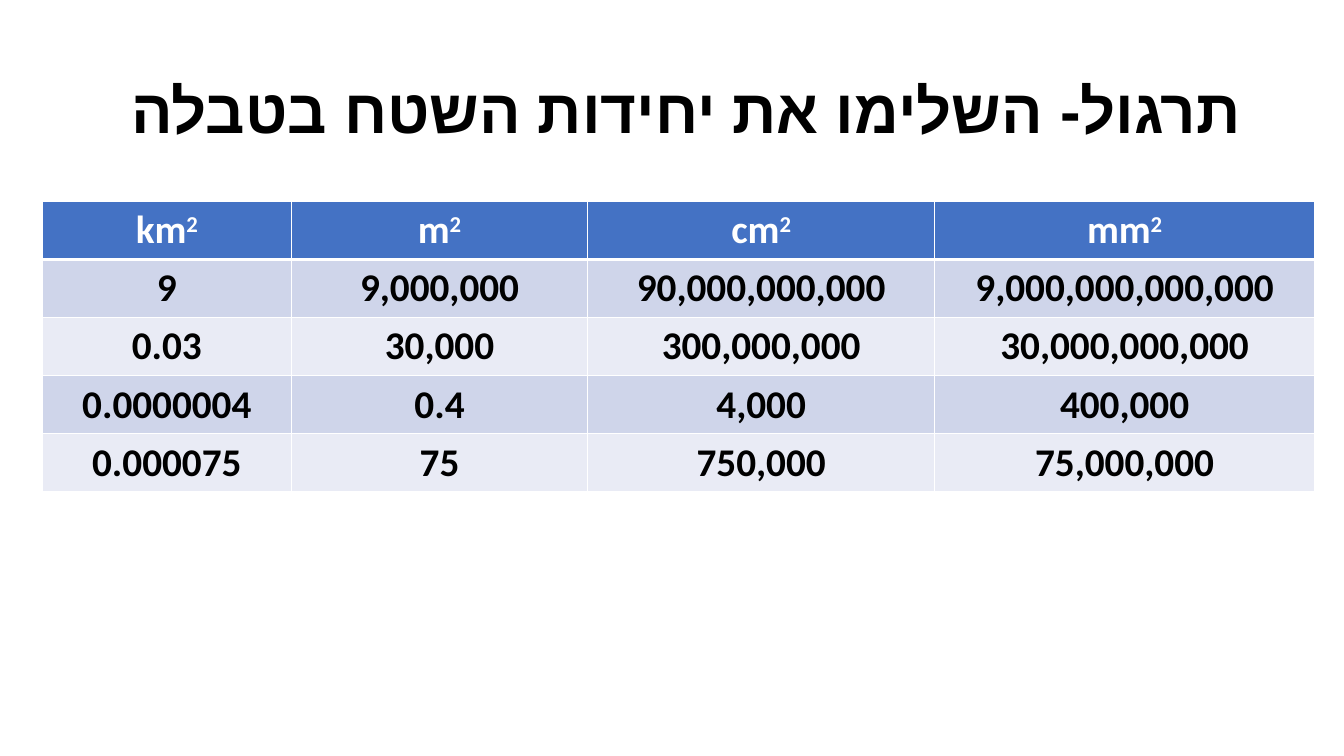
from lxml import etree
from pptx import Presentation
from pptx.dml.color import RGBColor
from pptx.enum.text import MSO_ANCHOR, MSO_AUTO_SIZE, PP_ALIGN
from pptx.oxml.ns import qn
from pptx.util import Pt

PX = 9144
TITLE_ONLY = 5
CENTER, RIGHT = PP_ALIGN.CENTER, PP_ALIGN.RIGHT
MIDDLE, NO_FIT = MSO_ANCHOR.MIDDLE, MSO_AUTO_SIZE.NONE
WHITE, BLACK, HEADER_BLUE = "FFFFFF", "000000", "4472C4"
BANDS = ("CFD5EA", "E9EBF5")
TITLE_FONT = {"name": "Arial", "size": Pt(44), "bold": True}
TABLE_FONT = {"name": "Calibri", "size": Pt(28), "bold": True}

UNITS = ("km", "m", "cm", "mm")
AREAS = (
    ("9", "9,000,000", "90,000,000,000", "9,000,000,000,000"),
    ("0.03", "30,000", "300,000,000", "30,000,000,000"),
    ("0.0000004", "0.4", "4,000", "400,000"),
    ("0.000075", "75", "750,000", "75,000,000"),
)
COLUMN_WIDTHS = (247, 294, 344, 377)
ROW_HEIGHT = 57


def px(length):
    return length * PX


def colour(value):
    return RGBColor.from_string(value)


def set_all(target, values):
    for name, value in values.items():
        setattr(target, name, value)


def add_span(para, text, font, ink, superscript=False):
    span = para.add_run()
    span.text = text
    set_all(span.font, font)
    span.font.color.rgb = colour(ink)
    if superscript:
        span.font._element.set("baseline", "30000")
    return span


def draw_title(page, text, box):
    title = page.shapes.title
    set_all(title, dict(zip(("left", "top", "width", "height"), map(px, box))))
    frame = title.text_frame
    set_all(frame, {"word_wrap": True, "auto_size": NO_FIT, "vertical_anchor": MIDDLE})
    para = frame.paragraphs[0]
    set_all(para, {"alignment": RIGHT, "line_spacing": 0.9})
    para._p.get_or_add_pPr().set("rtl", "1")
    span = add_span(para, text, TITLE_FONT, BLACK)
    properties = span.font._element
    properties.set("lang", "he-IL")
    etree.SubElement(properties, qn("a:cs"), typeface="Arial")


def set_borders(cell, bottom):
    properties = cell._tc.get_or_add_tcPr()
    widths = {"a:lnL": 1, "a:lnR": 1, "a:lnT": 1, "a:lnB": bottom}
    for index, (side, width) in enumerate(widths.items()):
        line = etree.Element(qn(side), w=str(Pt(width)))
        fill = etree.SubElement(line, qn("a:solidFill"))
        etree.SubElement(fill, qn("a:srgbClr"), val=WHITE)
        properties.insert(index, line)


def style_cell(cell, background, bottom=1):
    cell.fill.solid()
    cell.fill.fore_color.rgb = colour(background)
    set_borders(cell, bottom)
    para = cell.text_frame.paragraphs[0]
    para.alignment = CENTER
    return para


def draw_table(page, left, top):
    row_count = len(AREAS) + 1
    size = sum(COLUMN_WIDTHS), ROW_HEIGHT * row_count
    box = map(px, (left, top, *size))
    table = page.shapes.add_table(row_count, len(UNITS), *box).table
    for column, width in zip(table.columns, COLUMN_WIDTHS):
        column.width = px(width)
    for index, unit in enumerate(UNITS):
        para = style_cell(table.cell(0, index), HEADER_BLUE, bottom=3)
        add_span(para, unit, TABLE_FONT, WHITE)
        add_span(para, "2", TABLE_FONT, WHITE, superscript=True)
    for row, values in enumerate(AREAS, start=1):
        for index, value in enumerate(values):
            para = style_cell(table.cell(row, index), BANDS[(row - 1) % 2])
            add_span(para, value, TABLE_FONT, BLACK)


def build_exercise(deck):
    page = deck.slides.add_slide(deck.slide_layouts[TITLE_ONLY])
    page.background.fill.solid()
    page.background.fill.fore_color.rgb = colour(WHITE)
    draw_title(page, "תרגול- השלימו את יחידות השטח בטבלה", (92, 40, 1150, 145))
    draw_table(page, 42, 200)


def main():
    deck = Presentation()
    set_all(deck, {"slide_width": px(1333), "slide_height": px(750)})
    build_exercise(deck)
    deck.save("out.pptx")


if __name__ == "__main__":
    main()
